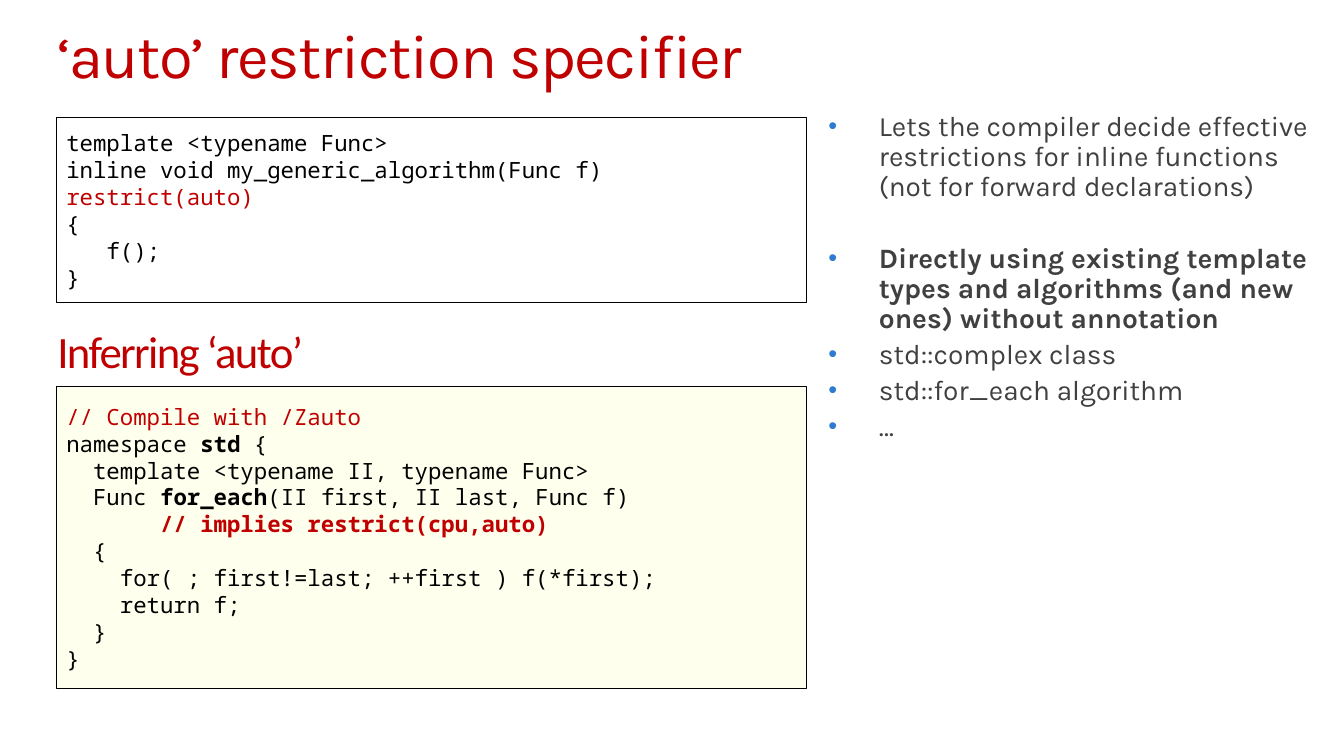
"""Build the slide on the 'auto' restriction specifier."""
from typing import NamedTuple

import lxml.etree
import pptx
import pptx.dml.color
import pptx.enum.shapes
import pptx.enum.text
import pptx.oxml
import pptx.oxml.ns
import pptx.util

Pt = pptx.util.Pt
qn = pptx.oxml.ns.qn
RED, BLACK, GRAY, BLUE, CREAM = "C00000", "000000", "404040", "2D7CCF", "FFFFCC"
MONO, SANS, HEAD = "Noto Sans Mono", "Karla", "Calibri"


class Run(NamedTuple):
    text: str
    color: str = BLACK
    bold: bool = False


class Code(NamedTuple):
    top: float
    height: float
    fill: str
    lines: list[list[Run]]


class Point(NamedTuple):
    text: str
    bold: bool = False
    gap: float = 4


CODES = [
    Code(84.2, 131.8, "", [
        [Run("template <typename Func>")],
        [Run("inline void my_generic_algorithm(Func f) "), Run("restrict(auto)", RED)],
        [Run("{")],
        [Run("   f();")],
        [Run("}")],
    ]),
    Code(275.8, 216, CREAM, [
        [Run("// Compile with /Zauto", RED)],
        [Run("namespace "), Run("std", bold=True), Run(" {")],
        [Run("  template <typename II, typename Func>")],
        [Run("  Func "), Run("for_each", bold=True), Run("(II first, II last, Func f)")],
        [Run("       // implies restrict(cpu,auto)", RED, True)],
        [Run("  {")],
        [Run("    for( ; first!=last; ++first ) f(*first);")],
        [Run("    return f;")],
        [Run("  }")],
        [Run("}")],
    ]),
]
POINTS = [
    Point("Lets the compiler decide effective restrictions for inline functions "
          "(not for forward declarations)", gap=0),
    Point("Directly using existing template types and algorithms (and new ones) "
          "without annotation", True, 29.7),
    Point("std::complex class"),
    Point("std::for_each algorithm"),
    Point("…"),
]


def paint(target, color: str) -> None:
    """Set a colour format from a hex string."""
    target.rgb = pptx.dml.color.RGBColor.from_string(color)


def place(shape, left: float, top: float, width: float, height: float) -> None:
    """Move and size a shape in points."""
    shape.left, shape.top = Pt(left), Pt(top)
    shape.width, shape.height = Pt(width), Pt(height)


def setup(frame, anchor, side: float = 0) -> None:
    """Set wrapping, anchor and insets of a text frame."""
    frame.word_wrap = True
    frame.auto_size = pptx.enum.text.MSO_AUTO_SIZE.NONE
    frame.vertical_anchor = anchor
    frame.margin_left = frame.margin_right = Pt(side)
    frame.margin_top = frame.margin_bottom = 0


def write(para, run: Run, face: str, size: float, track: int = 0) -> None:
    """Add one styled run to a paragraph."""
    para.alignment = pptx.enum.text.PP_ALIGN.LEFT
    piece = para.add_run()
    piece.text = run.text
    font = piece.font
    font.name, font.size, font.bold = face, Pt(size), run.bold
    paint(font.color, run.color)
    if track:
        piece._r.get_or_add_rPr().set("spc", str(track))


def line(frame, index: int):
    """Return the first paragraph or a new one."""
    return frame.add_paragraph() if index else frame.paragraphs[0]


def head(shape, text: str, face: str, size: float, track: int) -> None:
    """Fill a shape with a red heading."""
    setup(shape.text_frame, pptx.enum.text.MSO_ANCHOR.TOP)
    para = shape.text_frame.paragraphs[0]
    para.line_spacing = 0.9
    write(para, Run(text, RED), face, size, track)


def dot(para) -> None:
    """Give a paragraph a hanging blue bullet."""
    props = para._p.get_or_add_pPr()
    props.set("marL", str(Pt(36)))
    props.set("indent", str(-Pt(36)))
    tint = lxml.etree.SubElement(props, qn("a:buClr"))
    lxml.etree.SubElement(tint, qn("a:srgbClr"), val=BLUE)
    lxml.etree.SubElement(props, qn("a:buSzPct"), val="90000")
    lxml.etree.SubElement(props, qn("a:buFont"), typeface="Arial")
    lxml.etree.SubElement(props, qn("a:buChar"), char="•")


def listing(slide, code: Code) -> None:
    """Draw a framed code box."""
    box = slide.shapes.add_shape(
        pptx.enum.shapes.MSO_SHAPE.RECTANGLE,
        Pt(40.3), Pt(code.top), Pt(535.7), Pt(code.height))
    box.shadow.inherit = False
    if code.fill:
        box.fill.solid()
        paint(box.fill.fore_color, code.fill)
        tint = box._element.spPr.find(qn("a:solidFill"))[0]
        lxml.etree.SubElement(tint, qn("a:alpha"), val="32000")
    else:
        box.fill.background()
    paint(box.line.color, BLACK)
    box.line.width = Pt(0.75)
    setup(box.text_frame, pptx.enum.text.MSO_ANCHOR.MIDDLE, 7.2)
    for index, runs in enumerate(code.lines):
        para = line(box.text_frame, index)
        for run in runs:
            write(para, run, MONO, 16)


def main() -> None:
    """Build and save the deck."""
    deck = pptx.Presentation()
    deck.slide_width, deck.slide_height = Pt(960), Pt(540)
    slide = deck.slides.add_slide(deck.slide_layouts[1])

    title, body = slide.placeholders
    place(title, 41, 18, 877.7, 48.2)
    head(title, "‘auto’ restriction specifier", SANS, 44, -100)

    place(body, 591.8, 79.9, 344.2, 406)
    setup(body.text_frame, pptx.enum.text.MSO_ANCHOR.TOP)
    for index, point in enumerate(POINTS):
        para = line(body.text_frame, index)
        dot(para)
        para.line_spacing = 0.9
        para.space_before = Pt(point.gap)
        write(para, Run(point.text, GRAY, point.bold), SANS, 20)

    for code in CODES:
        listing(slide, code)
    label = slide.shapes.add_textbox(Pt(41), Pt(235.4), Pt(879.8), Pt(34.6))
    head(label, "Inferring ‘auto’", HEAD, 32, -120)
    deck.save("out.pptx")


if __name__ == "__main__":
    main()
